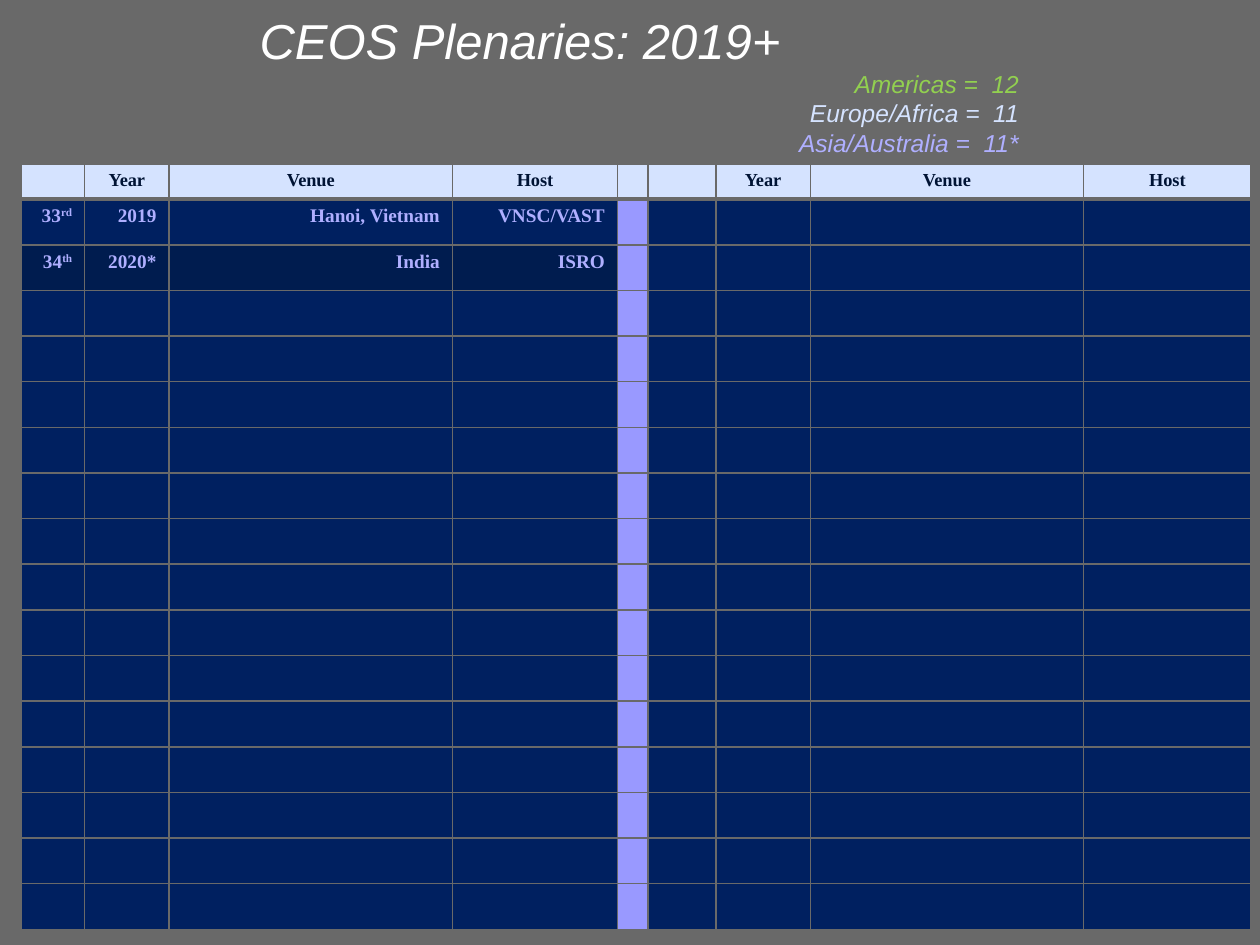
from dataclasses import dataclass

from lxml import etree
from pptx import Presentation
from pptx import util as u
from pptx.dml.color import RGBColor
from pptx.enum import text
from pptx.oxml import ns


@dataclass(frozen=True)
class Theme:
    background: str = "696969"
    title: str = "FFFFFF"
    americas: str = "92D050"
    europe: str = "D5E3FF"
    asia: str = "AFAFFF"
    header_fill: str = "D5E3FF"
    header_text: str = "001334"
    body_fill: str = "002060"
    planned_fill: str = "001C4F"
    divider_fill: str = "9999FF"
    heading_font: str = "Arial"
    table_font: str = "Times New Roman"
    title_size: float = 28
    tally_size: float = 14
    header_size: float = 10.5
    body_size: float = 11


THEME = Theme()
COLUMN_WIDTHS = [36, 48.24, 162, 94.32, 16.56, 38.88, 54, 156.24, 95.76]
HEADER_HEIGHT = 20.2
ROW_HEIGHT = 26.1
ROW_COUNT = 16
DIVIDER_COLUMN = 4
HEADINGS = ["", "Year", "Venue", "Host"]
PLENARIES = [
    (("33", "rd"), "2019", "Hanoi, Vietnam", "VNSC/VAST", THEME.body_fill),
    (("34", "th"), "2020*", "India", "ISRO", THEME.planned_fill),
]


def set_font(para, name, size, color, bold=False, italic=False):
    font = para.font
    font.name = name
    font.size = u.Pt(size)
    font.bold = bold
    font.italic = italic
    font.color.rgb = RGBColor.from_string(color)


def add_heading(page, left, top, width, height):
    box = page.shapes.add_textbox(u.Pt(left), u.Pt(top), u.Pt(width), u.Pt(height))
    frame = box.text_frame
    frame.word_wrap = True
    frame.margin_left = frame.margin_top = frame.margin_right = frame.margin_bottom = 0
    left_side, right_side = text.PP_ALIGN.LEFT, text.PP_ALIGN.RIGHT
    lines = [
        ("CEOS Plenaries: 2019+", THEME.title_size, THEME.title, left_side),
        ("Americas =  12", THEME.tally_size, THEME.americas, right_side),
        ("Europe/Africa =  11", THEME.tally_size, THEME.europe, right_side),
        ("Asia/Australia =  11*", THEME.tally_size, THEME.asia, right_side),
    ]
    for index, (words, size, color, side) in enumerate(lines):
        para = frame.add_paragraph() if index else frame.paragraphs[0]
        para.text = words
        para.alignment = side
        set_font(para, THEME.heading_font, size, color, italic=True)


def style_cell(cell, fill, bottom_width=1):
    properties = cell._tc.get_or_add_tcPr()
    widths = {"lnL": 1, "lnR": 1, "lnT": 1, "lnB": bottom_width}
    for side, width in widths.items():
        line = etree.SubElement(properties, ns.qn(f"a:{side}"), w=str(u.Pt(width)))
        paint = etree.SubElement(line, ns.qn("a:solidFill"))
        etree.SubElement(paint, ns.qn("a:srgbClr"), val=THEME.background)
    cell.fill.solid()
    cell.fill.fore_color.rgb = RGBColor.from_string(fill)


def write_cell(cell, words, size, color, side):
    para = cell.text_frame.paragraphs[0]
    para.alignment = side
    set_font(para, THEME.table_font, size, color, bold=True)
    if isinstance(words, tuple):
        number, suffix = words
        para.add_run().text = number
        span = para.add_run()
        span.text = suffix
        span.font._element.set("baseline", "30000")
    elif words:
        para.add_run().text = words
    else:
        etree.SubElement(para._p, ns.qn("a:endParaRPr"), sz=str(int(size * 100)))


def add_plenary_table(page, left, top):
    height = HEADER_HEIGHT + ROW_COUNT * ROW_HEIGHT
    table = page.shapes.add_table(
        ROW_COUNT + 1, len(COLUMN_WIDTHS),
        u.Pt(left), u.Pt(top), u.Pt(sum(COLUMN_WIDTHS)), u.Pt(height),
    ).table
    for column, width in zip(table.columns, COLUMN_WIDTHS):
        column.width = u.Pt(width)
    for index, row in enumerate(table.rows):
        row.height = u.Pt(ROW_HEIGHT if index else HEADER_HEIGHT)

    for column, words in enumerate(HEADINGS + [""] + HEADINGS):
        cell = table.cell(0, column)
        style_cell(cell, THEME.header_fill, bottom_width=3)
        write_cell(cell, words, THEME.header_size, THEME.header_text, text.PP_ALIGN.CENTER)

    for row in range(ROW_COUNT):
        entries, left_fill = [], THEME.body_fill
        if row < len(PLENARIES):
            *entries, left_fill = PLENARIES[row]
        for column in range(len(COLUMN_WIDTHS)):
            fill = left_fill if column < DIVIDER_COLUMN else THEME.body_fill
            if column == DIVIDER_COLUMN:
                fill = THEME.divider_fill
            words = entries[column] if column < len(entries) else ""
            cell = table.cell(row + 1, column)
            style_cell(cell, fill)
            write_cell(cell, words, THEME.body_size, THEME.asia, text.PP_ALIGN.RIGHT)


def main():
    deck = Presentation()
    deck.slide_width, deck.slide_height = u.Pt(720), u.Pt(540)
    page = deck.slides.add_slide(deck.slide_layouts[6])
    page.background.fill.solid()
    page.background.fill.fore_color.rgb = RGBColor.from_string(THEME.background)
    add_plenary_table(page, 12.4, 93.6)
    add_heading(page, 148.3, 5.8, 434, 84.2)
    deck.save("out.pptx")


if __name__ == "__main__":
    main()
